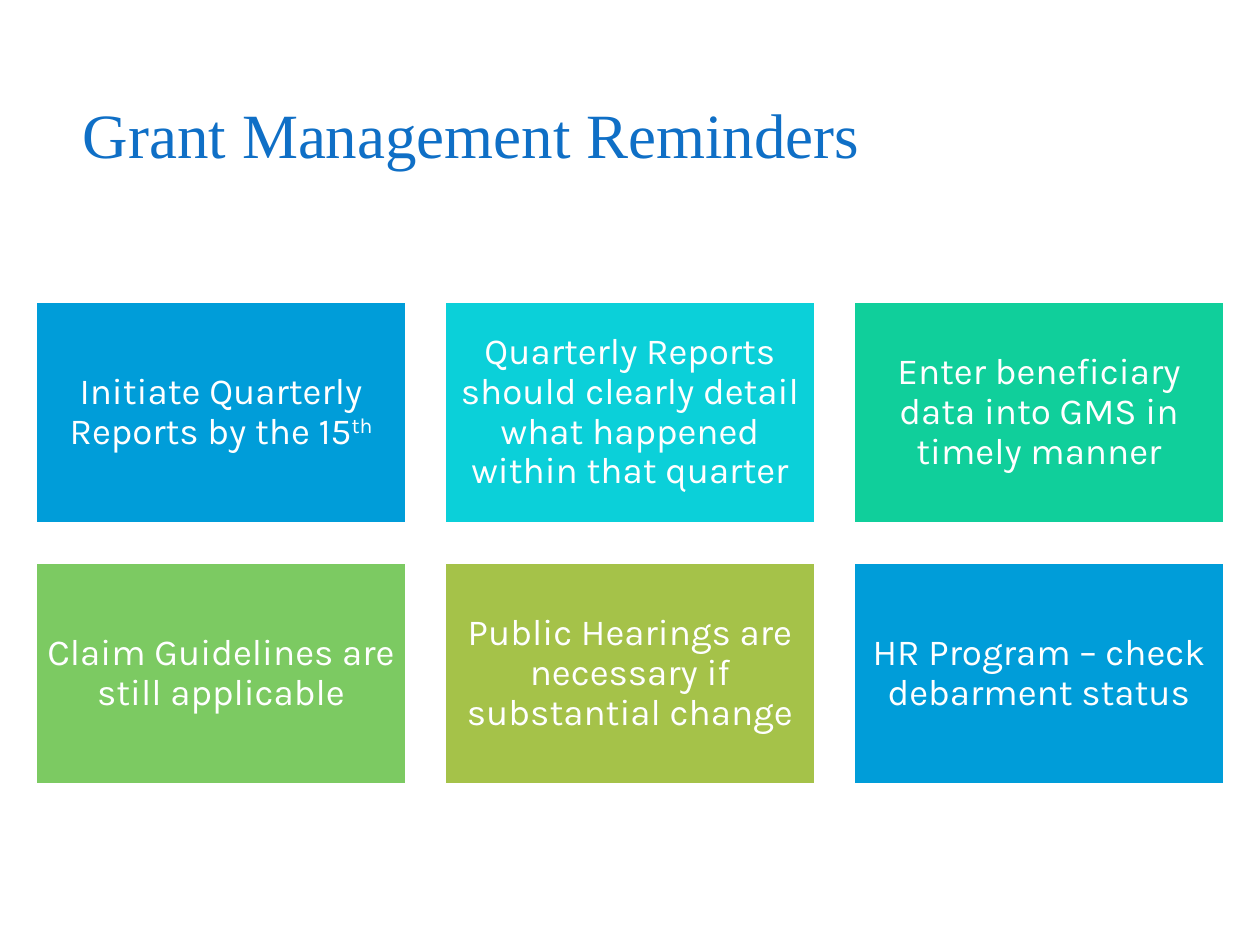
from dataclasses import dataclass

from pptx import Presentation
from pptx import util as u
from pptx.dml.color import RGBColor
from pptx.enum import shapes, text

TITLE = "Grant Management Reminders"
# (fill, text, superscript ending)
REMINDERS = [
    ("009DD9", "Initiate Quarterly Reports by the 15", "th"),
    ("0BD0D9", "Quarterly Reports should clearly detail what happened within that quarter", ""),
    ("10CF9B", "Enter beneficiary data into GMS in timely manner", ""),
    ("7CCA62", "Claim Guidelines are still applicable", ""),
    ("A5C249", "Public Hearings are necessary if substantial change", ""),
    ("009DD9", "HR Program – check debarment status", ""),
]


@dataclass(frozen=True)
class Theme:
    title_color: str = "0F6FC6"
    tile_color: str = "FFFFFF"
    title_font: str = "Times New Roman"
    tile_font: str = "Karla"
    title_size: int = 36
    tile_size: int = 21
    line_width: int = 2


THEME = Theme()
PX = u.Inches(1) / 126
SLIDE = (1260, 945)
TITLE_BOX = (71, 84, 888, 181)
TITLE_INSET, TILE_INSET = 12, 11
COLUMNS = 3
GRID_LEFT, GRID_TOP = 35, 301
TILE_W, TILE_H = 372, 223
GAP_X, GAP_Y = 37, 38


def px(*values):
    return [u.Emu(round(v * PX)) for v in values]


def set_frame(tf, inset, anchor):
    tf.word_wrap = True
    tf.vertical_anchor = anchor
    tf.margin_left = tf.margin_top = tf.margin_right = tf.margin_bottom = px(inset)[0]


def add_run(p, words, font, size, color):
    r = p.add_run()
    r.text = words
    r.font.name = font
    r.font.size = u.Pt(size)
    r.font.color.rgb = RGBColor.from_string(color)
    return r


def add_title(s):
    tf = s.shapes.add_textbox(*px(*TITLE_BOX)).text_frame
    set_frame(tf, TITLE_INSET, text.MSO_ANCHOR.TOP)
    add_run(tf.paragraphs[0], TITLE, THEME.title_font, THEME.title_size, THEME.title_color)


def add_tile(s, index, fill, words, ending):
    row, col = divmod(index, COLUMNS)
    left = GRID_LEFT + col * (TILE_W + GAP_X)
    top = GRID_TOP + row * (TILE_H + GAP_Y)
    sp = s.shapes.add_shape(shapes.MSO_SHAPE.RECTANGLE, *px(left, top, TILE_W, TILE_H))
    sp.shadow.inherit = False
    sp.fill.solid()
    sp.fill.fore_color.rgb = RGBColor.from_string(fill)
    sp.line.color.rgb = RGBColor.from_string(THEME.tile_color)
    sp.line.width = u.Pt(THEME.line_width)

    set_frame(sp.text_frame, TILE_INSET, text.MSO_ANCHOR.MIDDLE)
    p = sp.text_frame.paragraphs[0]
    p.alignment = text.PP_ALIGN.CENTER
    p.line_spacing = 0.9
    style = (THEME.tile_font, THEME.tile_size, THEME.tile_color)
    add_run(p, words, *style)
    if ending:
        r = add_run(p, ending, *style)
        r._r.get_or_add_rPr().set("baseline", "30000")


def main():
    prs = Presentation()
    prs.slide_width, prs.slide_height = px(*SLIDE)
    s = prs.slides.add_slide(prs.slide_layouts[6])
    add_title(s)
    for index, reminder in enumerate(REMINDERS):
        add_tile(s, index, *reminder)
    prs.save("out.pptx")


if __name__ == "__main__":
    main()
